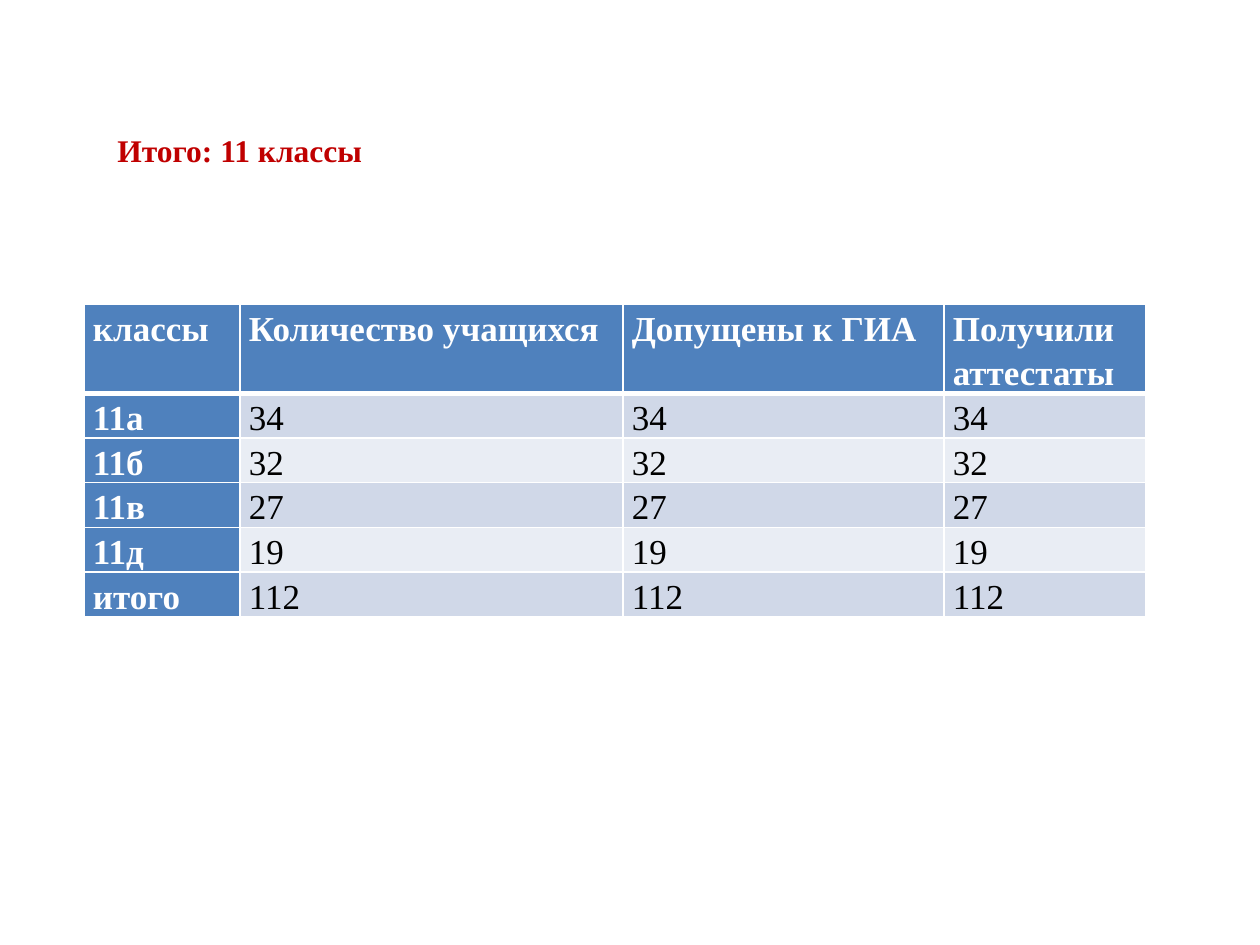
import lxml.etree
import pptx
import pptx.dml.color
import pptx.enum.text
import pptx.oxml.ns
import pptx.util

PX = pptx.util.Inches(1) / 126
FONT = "Times New Roman"
WHITE = pptx.dml.color.RGBColor(0xFF, 0xFF, 0xFF)
BLACK = pptx.dml.color.RGBColor(0x00, 0x00, 0x00)
RED = pptx.dml.color.RGBColor(0xC0, 0x00, 0x00)
BLUE = pptx.dml.color.RGBColor(0x4F, 0x81, 0xBD)
BAND_DARK = pptx.dml.color.RGBColor(0xD0, 0xD8, 0xE8)
BAND_LIGHT = pptx.dml.color.RGBColor(0xE9, 0xED, 0xF4)

COLUMN_WIDTHS = [156, 383, 321, 202]
HEADER_HEIGHT = 88
ROW_HEIGHT = 44
HEADINGS = ["классы", "Количество учащихся", "Допущены к ГИА", "Получили аттестаты"]
PUPILS = {"11а": 34, "11б": 32, "11в": 27, "11д": 19}


def px(length):
    return pptx.util.Emu(round(length * PX))


class SlideWriter:
    def __init__(self, deck):
        self.page = deck.slides.add_slide(deck.slide_layouts[6])

    def span(self, para, text, size, color, bold):
        span = para.add_run()
        span.text = text
        span.font.name = FONT
        span.font.size = pptx.util.Pt(size)
        span.font.bold = bold
        span.font.color.rgb = color

    def title(self, text, left, top, width, height):
        box = self.page.shapes.add_textbox(px(left), px(top), px(width), px(height))
        frame = box.text_frame
        frame.word_wrap = False
        frame.margin_top = px(9)
        self.span(frame.paragraphs[0], text, 18, RED, True)

    def border(self, cell, side, points):
        properties = cell._tc.get_or_add_tcPr()
        name = pptx.oxml.ns.qn
        line = lxml.etree.SubElement(
            properties, name(f"a:ln{side}"), w=str(pptx.util.Pt(points)))
        fill = lxml.etree.SubElement(line, name("a:solidFill"))
        lxml.etree.SubElement(fill, name("a:srgbClr"), val=str(WHITE))

    def cell(self, cell, text, row, column):
        strong = row == 0 or column == 0
        cell.margin_left = cell.margin_right = px(9)
        cell.margin_top = cell.margin_bottom = 0
        # Borders come before the fill in the cell properties.
        for side in "LRTB":
            under_header = (row, side) in [(0, "B"), (1, "T")]
            self.border(cell, side, 3 if under_header else 1)
        cell.fill.solid()
        band = BAND_DARK if row % 2 else BAND_LIGHT
        cell.fill.fore_color.rgb = BLUE if strong else band
        para = cell.text_frame.paragraphs[0]
        para.alignment = pptx.enum.text.PP_ALIGN.JUSTIFY
        para.line_spacing = 1.15
        self.span(para, text, 20, WHITE if strong else BLACK, strong)

    def table(self, rows, left, top):
        height = HEADER_HEIGHT + ROW_HEIGHT * (len(rows) - 1)
        table = self.page.shapes.add_table(
            len(rows), len(COLUMN_WIDTHS), px(left), px(top),
            px(sum(COLUMN_WIDTHS)), px(height)).table
        for column, width in zip(table.columns, COLUMN_WIDTHS):
            column.width = px(width)
        for r, texts in enumerate(rows):
            table.rows[r].height = px(ROW_HEIGHT if r else HEADER_HEIGHT)
            for c, text in enumerate(texts):
                self.cell(table.cell(r, c), text, r, c)


def main():
    deck = pptx.Presentation()
    deck.slide_width = px(1260)
    deck.slide_height = px(945)
    writer = SlideWriter(deck)
    counts = {**PUPILS, "итого": sum(PUPILS.values())}
    rows = [HEADINGS] + [[name] + [str(count)] * 3 for name, count in counts.items()]
    writer.table(rows, 84, 304)
    writer.title("Итого: 11 классы", 105, 122, 272, 89)
    deck.save("out.pptx")


if __name__ == "__main__":
    main()
